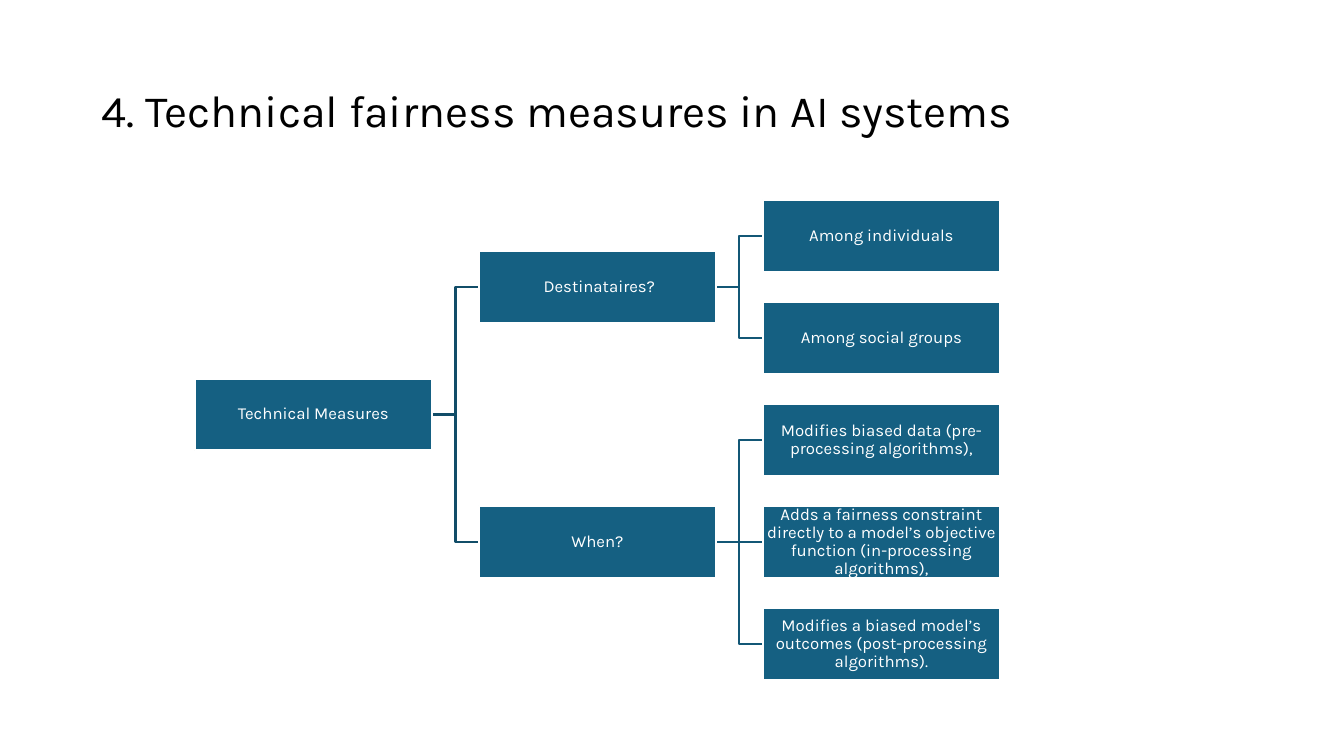
from lxml import etree
from pptx import Presentation
from pptx import util as u
from pptx.dml.color import RGBColor
from pptx.enum import shapes, text
from pptx.oxml.ns import qn

PX = 914400 / 100.8


def px(n):
    return u.Emu(round(n * PX))


def rgb(value):
    return RGBColor.from_string(value)


prs = Presentation()
prs.slide_width, prs.slide_height = px(1344), px(756)
s = prs.slides.add_slide(prs.slide_layouts[6])

title = s.shapes.add_textbox(px(92), px(40), px(1159), px(146))
tf = title.text_frame
tf.word_wrap = True
tf.vertical_anchor = text.MSO_ANCHOR.MIDDLE
p = tf.paragraphs[0]
p.line_spacing = 0.9
r = p.add_run()
r.text = "4. Technical fairness measures in AI systems"
r.font.name, r.font.size = "Karla", u.Pt(32)
r.font.color.rgb = rgb("000000")

LEFT, TOP, COL_STEP, ROW_STEP = 195, 200, 284, 102
BOX_W, BOX_H = 237, 72

nodes = {
    "root": (0, 1.75, "Technical Measures"),
    "who": (1, 0.5, " Destinataires?"),
    "individuals": (2, 0, "Among individuals"),
    "groups": (2, 1, "Among social groups"),
    "when": (1, 3, "When?"),
    "pre": (2, 2, "Modifies biased data (pre-processing algorithms),"),
    "in": (2, 3, "Adds a fairness constraint directly to a model’s objective function (in-processing algorithms),"),
    "post": (2, 4, "Modifies a biased model’s outcomes (post-processing algorithms)."),
}
children = {
    "root": ["who", "when"],
    "who": ["individuals", "groups"],
    "when": ["pre", "in", "post"],
}
line_colors = {"root": "114D68", "who": "135776", "when": "135776"}

links = []
for parent, names in children.items():
    col, row, _ = nodes[parent]
    x1 = LEFT + col * COL_STEP + BOX_W
    y1 = TOP + row * ROW_STEP + BOX_H / 2
    for child in names:
        col, row, _ = nodes[child]
        x2 = LEFT + col * COL_STEP
        y2 = TOP + row * ROW_STEP + BOX_H / 2
        kind = shapes.MSO_CONNECTOR.STRAIGHT if y1 == y2 else shapes.MSO_CONNECTOR.ELBOW
        link = s.shapes.add_connector(kind, px(x1), px(y1), px(x2), px(y2))
        link.line.color.rgb = rgb(line_colors[parent])
        link.line.width = u.Pt(1.5)
        etree.SubElement(link._element.spPr, qn("a:effectLst"))
        links.append((link, parent, child))

boxes = {}
for name, (col, row, label) in nodes.items():
    sp = s.shapes.add_shape(
        shapes.MSO_SHAPE.RECTANGLE,
        px(LEFT + col * COL_STEP), px(TOP + row * ROW_STEP), px(BOX_W), px(BOX_H),
    )
    sp.shadow.inherit = False
    sp.fill.solid()
    sp.fill.fore_color.rgb = rgb("156082")
    sp.line.color.rgb = rgb("FFFFFF")
    sp.line.width = u.Pt(1.5)
    tf = sp.text_frame
    tf.word_wrap = True
    tf.vertical_anchor = text.MSO_ANCHOR.MIDDLE
    tf.margin_left = tf.margin_right = tf.margin_top = tf.margin_bottom = px(1)
    p = tf.paragraphs[0]
    p.alignment = text.PP_ALIGN.CENTER
    p.line_spacing = 0.9
    r = p.add_run()
    r.text = label
    r.font.name, r.font.size = "Karla", u.Pt(12)
    r.font.color.rgb = rgb("FFFFFF")
    boxes[name] = sp

for link, parent, child in links:
    link.begin_connect(boxes[parent], 3)
    link.end_connect(boxes[child], 1)

prs.save("out.pptx")
